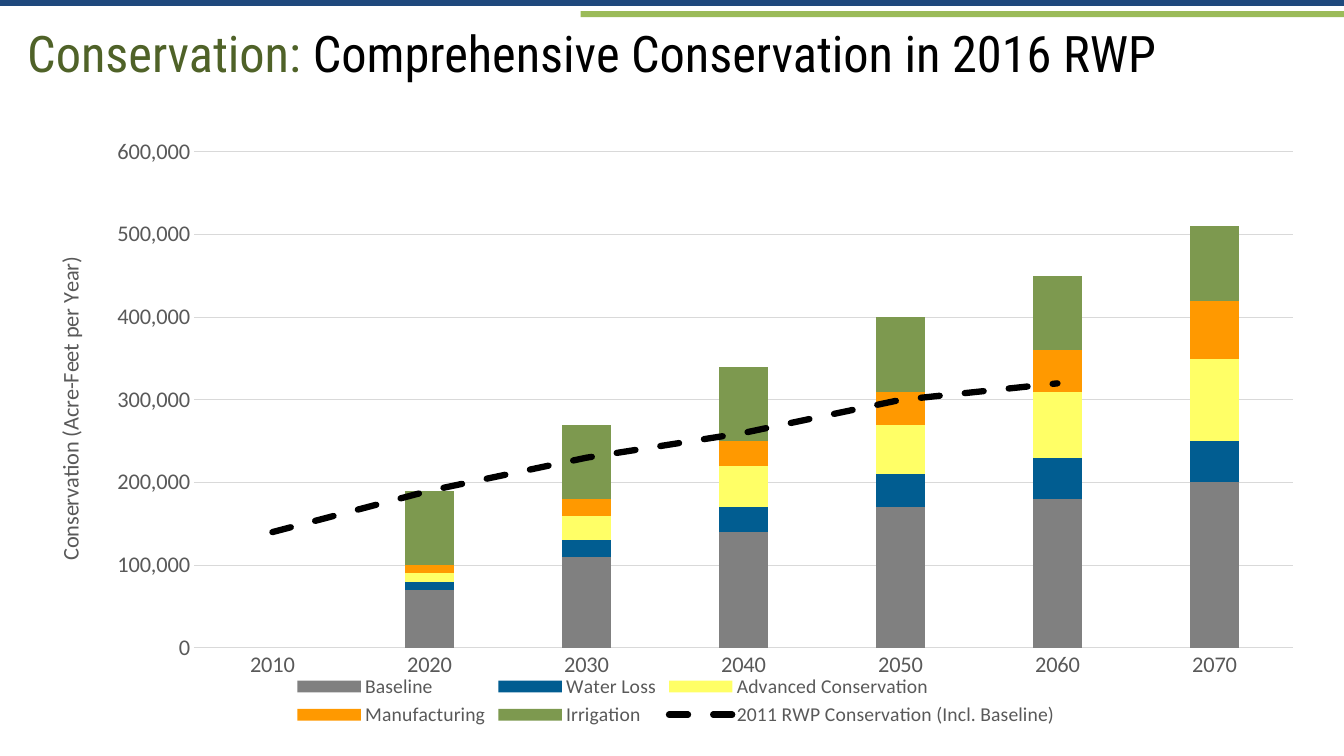
from pptx import Presentation
from pptx.chart.data import CategoryChartData
from pptx.dml.color import RGBColor
from pptx.enum import chart as ch, dml, shapes, text
from pptx.oxml import ns, parse_xml
from pptx.util import Inches, Pt

COLORS = {
    "navy": "1F497D", "green": "9BBB59", "olive": "4F6228", "black": "000000",
    "gray": "595959", "rule": "D9D9D9",
}
YEARS = ["2010", "2020", "2030", "2040", "2050", "2060", "2070"]
STACKS = [
    ("Baseline", "808080", [None, 70000, 110000, 140000, 170000, 180000, 200000]),
    ("Water Loss", "015D91", [None, 10000, 20000, 30000, 40000, 50000, 50000]),
    ("Advanced Conservation", "FFFF66", [None, 10000, 30000, 50000, 60000, 80000, 100000]),
    ("Manufacturing", "FF9900", [None, 10000, 20000, 30000, 40000, 50000, 70000]),
    ("Irrigation", "7D994F", [None] + [90000] * 6),
]
TREND = ("2011 RWP Conservation (Incl. Baseline)",
         [140000, 190000, 230000, 260000, 300000, 320000, None])


def rgb(value):
    return RGBColor.from_string(value)


def style_font(font, size, color, name="Calibri"):
    font.size, font.name, font.bold = Pt(size), name, False
    font.color.rgb = rgb(color)


def add_text(p, words, size=36, color=COLORS["black"], name="Roboto Condensed"):
    r = p.add_run()
    r.text = words
    style_font(r.font, size, color, name)


def add_bar(s, x, y, w, h, color):
    sp = s.shapes.add_shape(shapes.MSO_SHAPE.RECTANGLE,
                            Inches(x), Inches(y), Inches(w), Inches(h))
    sp.shadow.inherit = False
    sp.fill.solid()
    sp.fill.fore_color.rgb = rgb(color)
    sp.line.fill.background()


def add_header(s, x, y, w, h):
    add_bar(s, x, y, w, h, COLORS["navy"])
    add_bar(s, x + 5.76, y + 0.11, w - 5.76, h, COLORS["green"])


def add_title(s, x, y, w, h):
    sp = s.shapes.title
    sp.left, sp.top, sp.width, sp.height = (Inches(v) for v in (x, y, w, h))
    tf = sp.text_frame
    tf.word_wrap = True
    tf.vertical_anchor = text.MSO_ANCHOR.TOP
    p = tf.paragraphs[0]
    p.alignment = text.PP_ALIGN.LEFT
    add_text(p, "Conservation: ", color=COLORS["olive"])
    add_text(p, "Comprehensive Conservation in 2016 RWP")


def move_trend_to_line(chart):
    bars = chart.plots[0]._element
    ser = bars.findall(ns.qn("c:ser"))[-1]
    for flag in ser.findall(ns.qn("c:invertIfNegative")):
        ser.remove(flag)
    line = parse_xml(
        f'<c:lineChart {ns.nsdecls("c")}><c:grouping val="standard"/>'
        '<c:varyColors val="0"/><c:marker val="1"/></c:lineChart>')
    line.insert(2, ser)
    for axis in bars.findall(ns.qn("c:axId")):
        line.append(parse_xml(
            f'<c:axId {ns.nsdecls("c")} val="{axis.get("val")}"/>'))
    bars.addnext(line)
    trend = chart.plots[1].series[0]
    trend.smooth = False
    trend.marker.style = ch.XL_MARKER_STYLE.NONE
    ln = trend.format.line
    ln.width = Pt(4.5)
    ln.color.rgb = rgb(COLORS["black"])
    ln.dash_style = dml.MSO_LINE.DASH
    trend._element.find(".//" + ns.qn("a:ln")).set("cap", "rnd")


def set_plot_box(chart, x, y, w, h):
    area = chart._chartSpace.chart.plotArea
    for old in area.findall(ns.qn("c:layout")):
        area.remove(old)
    sizes = "".join(f'<c:{k} val="{v}"/>' for k, v in zip("xywh", (x, y, w, h)))
    area.insert(0, parse_xml(
        f'<c:layout {ns.nsdecls("c")}><c:manualLayout>'
        '<c:layoutTarget val="inner"/><c:xMode val="edge"/><c:yMode val="edge"/>'
        f'{sizes}</c:manualLayout></c:layout>'))


def format_axes(chart):
    cat, val = chart.category_axis, chart.value_axis
    for axis in (cat, val):
        axis.major_tick_mark = axis.minor_tick_mark = ch.XL_TICK_MARK.NONE
        style_font(axis.tick_labels.font, 16, COLORS["gray"])
    val.minimum_scale, val.maximum_scale, val.major_unit = 0, 600000, 100000
    val.tick_labels.number_format = "#,##0"
    val.tick_labels.number_format_is_linked = False
    val.format.line.fill.background()
    for ln in (cat.format.line, val.major_gridlines.format.line):
        ln.color.rgb = rgb(COLORS["rule"])
        ln.width = Pt(0.75)
    add_text(val.axis_title.text_frame.paragraphs[0],
             "Conservation (Acre-Feet per Year)", 16, COLORS["gray"], "Calibri")


def add_conservation_chart(s, x, y, w, h):
    data = CategoryChartData(number_format="#,##0")
    data.categories = YEARS
    for name, _, values in STACKS:
        data.add_series(name, values)
    data.add_series(*TREND)
    chart = s.shapes.add_chart(ch.XL_CHART_TYPE.COLUMN_STACKED, Inches(x), Inches(y),
                               Inches(w), Inches(h), data).chart
    style_font(chart.font, 10, COLORS["black"])
    chart.has_title = False
    plot = chart.plots[0]
    plot.vary_by_categories = False
    plot.gap_width, plot.overlap = 219, 100
    move_trend_to_line(chart)
    for series, (_, color, _) in zip(plot.series, STACKS):
        series.format.fill.solid()
        series.format.fill.fore_color.rgb = rgb(color)
    format_axes(chart)
    set_plot_box(chart, 0.125, 0.043, 0.855, 0.82)
    chart.has_legend = True
    chart.legend.position = ch.XL_LEGEND_POSITION.BOTTOM
    chart.legend.include_in_layout = False
    style_font(chart.legend.font, 14, COLORS["gray"])


def main():
    prs = Presentation()
    prs.slide_width, prs.slide_height = Inches(13.33), Inches(7.5)
    s = prs.slides.add_slide(prs.slide_layouts[5])
    add_header(s, 0, 0, 13.33, 0.06)
    add_title(s, 0.17, 0.17, 12.92, 0.92)
    add_conservation_chart(s, 0.33, 1.25, 12.75, 6)
    prs.save("out.pptx")


if __name__ == "__main__":
    main()
